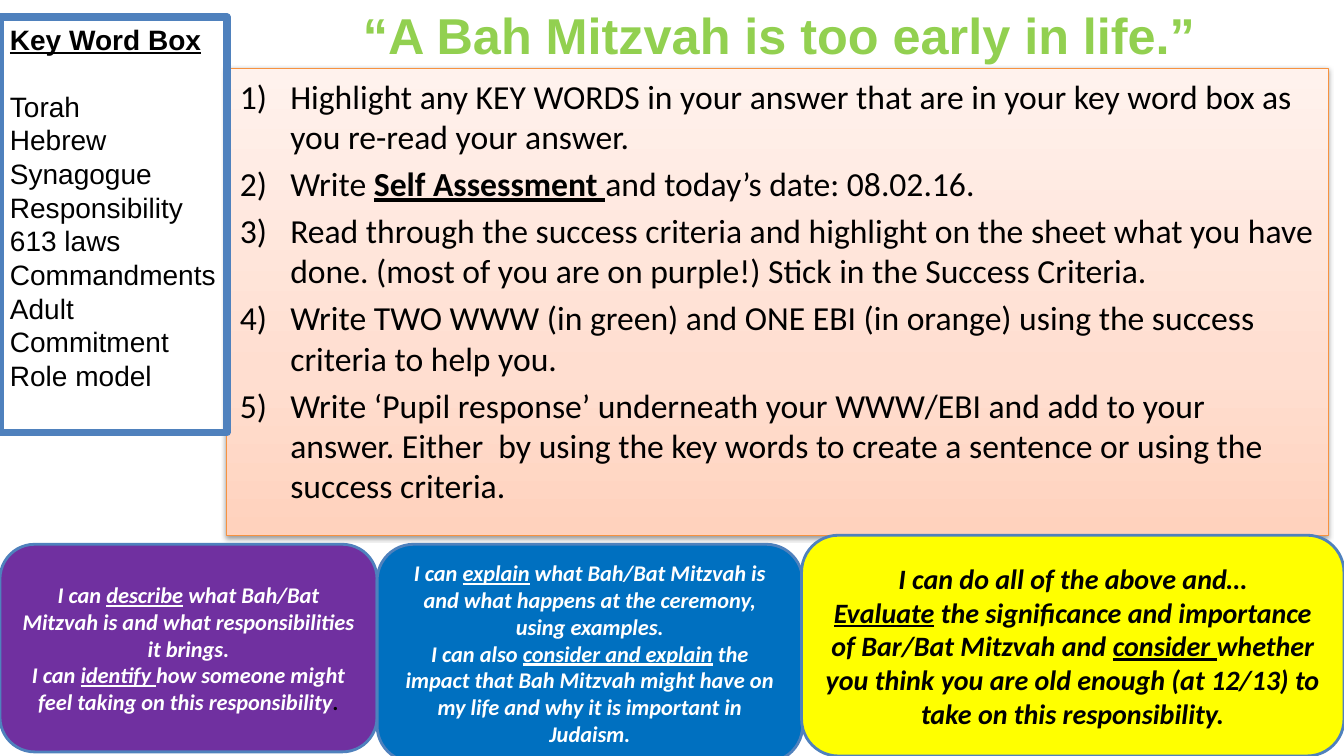
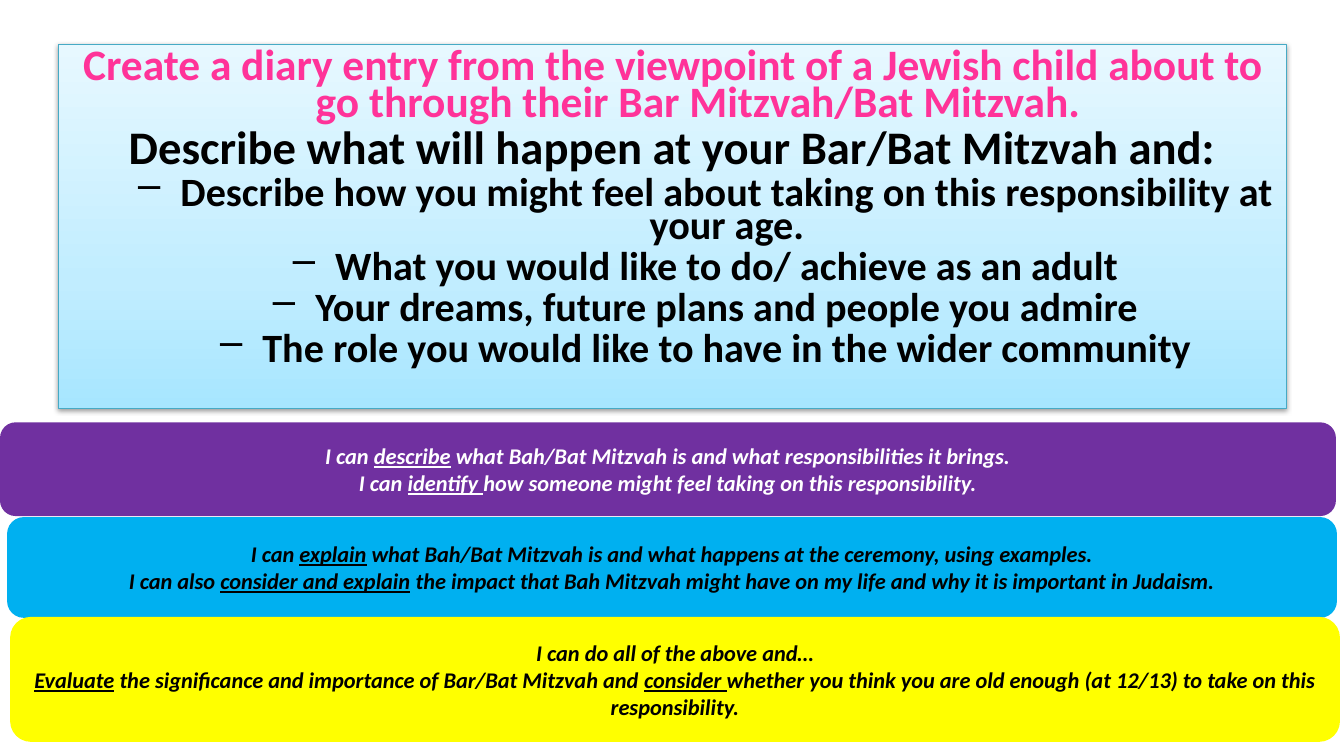
import copy

import pptx
import pptx.dml.color
import pptx.enum.shapes
import pptx.enum.text
import pptx.oxml
import pptx.oxml.ns
import pptx.util

PX = 9144  # EMU in one px, 100 px to the inch
SLIDE_SIZE = (1333, 750)
COLOURS = {
    "black": "000000", "white": "FFFFFF", "title": "92D050", "pink": "FF3399",
    "frame": "4F81BD", "purple": "7030A0", "blue": "0070C0", "sky": "00B0F0",
    "yellow": "FFFF00", "orange line": "F69240", "aqua line": "46AAC5",
}
ORANGE_FADE = ((0, "FFD2BD"), (0.35, "FFDED0"), (1, "FFF2ED"))
AQUA_FADE = ((0, "A7E6FF"), (0.35, "C1EDFF"), (1, "E7F8FF"))

SHAPES = pptx.enum.shapes.MSO_SHAPE
ALIGN = pptx.enum.text.PP_ALIGN
ANCHOR = pptx.enum.text.MSO_ANCHOR

# Underscores enclose underlined words
DESCRIBE = (
    "I can _describe_ what Bah/Bat Mitzvah is and what responsibilities it brings.",
    "I can _identify _how someone might feel taking on this responsibility",
)
EXPLAIN = (
    "I can _explain_ what Bah/Bat Mitzvah is and what happens at the ceremony, using examples.",
    "I can also _consider and explain_ the impact that Bah Mitzvah might have on my life "
    "and why it is important in Judaism.",
)
EVALUATE = (
    "I can do all of the above and…",
    "_Evaluate_ the significance and importance of Bar/Bat Mitzvah and _consider _whether "
    "you think you are old enough (at 12/13) to take on this responsibility.",
)
KEY_WORDS = ("Torah", "Hebrew", "Synagogue", "Responsibility", "613 laws",
             "Commandments", "Adult", "Commitment", "Role model")
STEPS = (
    "Highlight any KEY WORDS in your answer that are in your key word box as you re-read your answer.",
    "Write _Self Assessment _and today’s date: 08.02.16.",
    "Read through the success criteria and highlight on the sheet what you have done. "
    "(most of you are on purple!) Stick in the Success Criteria.",
    "Write TWO WWW (in green) and ONE EBI (in orange) using the success criteria to help you.",
    "Write ‘Pupil response’ underneath your WWW/EBI and add to your answer. "
    "Either  by using the key words to create a sentence or using the success criteria.",
)
DIARY_PROMPTS = (
    "Describe how you might feel about taking on this responsibility at your age.",
    "What you would like to do/ achieve as an adult",
    "Your dreams, future plans and people you admire",
    "The role you would like to have in the wider community",
)


def rgb(name):
    return pptx.dml.color.RGBColor.from_string(COLOURS.get(name, name))


def emu(*lengths):
    return [pptx.util.Emu(length * PX) for length in lengths]


def style(font, size, colour="black", name="Calibri", bold=None, italic=None):
    font.size, font.name = pptx.util.Pt(size), name
    font.bold, font.italic = bold, italic
    font.color.rgb = rgb(colour)


def write(para, text, bold_marks=False):
    """Add spans, underlining the words between underscores."""
    for index, part in enumerate(text.split("_")):
        if part:
            span = para.add_run()
            span.text = part
            if index % 2:
                span.font.underline = True
                if bold_marks:
                    span.font.bold = True


def next_para(frame):
    first = frame.paragraphs[0]
    return frame.add_paragraph() if first.runs else first


def set_indent(para, left, hanging, bullet=None, **attributes):
    properties = para._p.get_or_add_pPr()
    properties.set("marL", str(left * PX))
    properties.set("indent", str(-hanging * PX))
    if bullet:
        element = pptx.oxml.parse_xml(
            f'<a:{bullet} {pptx.oxml.ns.nsdecls("a")}/>')
        for key, value in attributes.items():
            element.set(key, value)
        properties.append(element)


def add_box(page, kind, box, fill=None, line=None, width=1.0, insets=(10, 5)):
    shape = page.shapes.add_shape(kind, *emu(*box))
    shape.shadow.inherit = False
    if fill:
        shape.fill.solid()
        shape.fill.fore_color.rgb = rgb(fill)
    else:
        shape.fill.background()
    if line:
        shape.line.color.rgb = rgb(line)
        shape.line.width = pptx.util.Pt(width)
    else:
        shape.line.fill.background()
    frame = shape.text_frame
    frame.word_wrap = True
    frame.margin_left = frame.margin_right = emu(insets[0])[0]
    frame.margin_top = frame.margin_bottom = emu(insets[1])[0]
    return shape


def add_panel(page, box, fade, line):
    """Rectangle with an upward fade and a soft shadow."""
    shape = add_box(page, SHAPES.RECTANGLE, box, line=line, width=0.75, insets=(13, 7))
    shape.fill.gradient()
    shape.fill.gradient_angle = 90
    properties = shape._element.spPr
    stops = properties.find(".//" + pptx.oxml.ns.qn("a:gsLst"))
    stops.append(copy.deepcopy(stops[0]))
    for stop, (position, colour) in zip(shape.fill.gradient_stops, fade):
        stop.position = position
        stop.color.rgb = rgb(colour)
    properties.find(pptx.oxml.ns.qn("a:effectLst")).append(pptx.oxml.parse_xml(
        f'<a:outerShdw {pptx.oxml.ns.nsdecls("a")} blurRad="40000" dist="20000" '
        'dir="5400000" rotWithShape="0"><a:srgbClr val="000000">'
        '<a:alpha val="38000"/></a:srgbClr></a:outerShdw>'))
    shape.text_frame.vertical_anchor = ANCHOR.TOP
    return shape.text_frame


def add_criteria(page, box, lines, fill, colour, size=16, line=None):
    """Rounded box of success criteria; returns its last paragraph."""
    shape = add_box(page, SHAPES.ROUNDED_RECTANGLE, box, fill, line, 2)
    frame = shape.text_frame
    frame.vertical_anchor = ANCHOR.MIDDLE
    for text in lines:
        para = next_para(frame)
        para.alignment = ALIGN.CENTER
        style(para.font, size, colour, bold=True, italic=True)
        write(para, text)
    return para


def add_title(page, box, text):
    frame = page.shapes.add_textbox(*emu(*box)).text_frame
    frame.word_wrap = True
    para = frame.paragraphs[0]
    para.alignment = ALIGN.CENTER
    style(para.font, 36, "title", "Arial", bold=True)
    write(para, text)


def add_key_words(page, box):
    shape = add_box(page, SHAPES.RECTANGLE, box, line="frame", width=5.5)
    frame = shape.text_frame
    frame.vertical_anchor = ANCHOR.TOP
    for text in ("_Key Word Box_",) + KEY_WORDS:
        para = next_para(frame)
        heading = text.startswith("_")
        para.alignment = ALIGN.LEFT
        para.line_spacing = pptx.util.Pt(24)
        if heading:
            para.space_after = pptx.util.Pt(24)
        style(para.font, 20, name="Arial", bold=heading)
        write(para, text)


def add_steps(page, box):
    frame = add_panel(page, box, ORANGE_FADE, "orange line")
    for index, text in enumerate(STEPS):
        para = next_para(frame)
        para.alignment = ALIGN.LEFT
        para.space_before = pptx.util.Pt(4.8 if index else 0)
        set_indent(para, 50, 50, "buAutoNum", type="arabicParenR")
        style(para.font, 24)
        write(para, text, bold_marks=True)


def add_diary_task(page, box):
    frame = add_panel(page, box, AQUA_FADE, "aqua line")
    rows = [
        ("Create a diary entry from the viewpoint of a Jewish child about to go through "
         "their Bar Mitzvah/Bat Mitzvah.", 31, "pink", 0),
        ("Describe what will happen at your Bar/Bat Mitzvah and:", 33.3, "black", 0),
    ] + [(prompt, 28.7, "black", 1) for prompt in DIARY_PROMPTS]
    for index, (text, size, colour, level) in enumerate(rows):
        para = next_para(frame)
        para.level = level
        para.alignment = ALIGN.CENTER
        para.line_spacing = 0.7
        para.space_before = pptx.util.Pt(round(size * 0.18, 1) if index else 0)
        if level:
            set_indent(para, 108, 42, "buChar", char="–")
        else:
            set_indent(para, 50, 50)
        style(para.font, size, colour, bold=True)
        write(para, text)


def build_self_assessment(page):
    add_title(page, (263, -1, 1020, 71), "“A Bah Mitzvah is too early in life.”")
    add_steps(page, (225, 68, 1093, 463))
    add_key_words(page, (0, 17, 225, 412))
    # Success criteria side by side
    last = add_criteria(page, (0, 540, 374, 206), DESCRIBE, "purple", "white", line="frame")
    stop = last.add_run()
    stop.text = "."
    stop.font.color.rgb = rgb("black")
    add_criteria(page, (374, 540, 422, 216), EXPLAIN, "blue", "white", line="frame")
    add_criteria(page, (795, 531, 538, 219), EVALUATE, "yellow", "black", 20, "frame")


def build_diary(page):
    add_diary_task(page, (58, 44, 1218, 361))
    # Success criteria stacked
    last = add_criteria(page, (0, 419, 1325, 93), DESCRIBE, "purple", "white")
    write(last, ".")
    add_criteria(page, (7, 513, 1319, 100), EXPLAIN, "sky", "black")
    add_criteria(page, (10, 612, 1319, 124), EVALUATE, "yellow", "black")


def main():
    deck = pptx.Presentation()
    deck.slide_width, deck.slide_height = emu(*SLIDE_SIZE)
    for build in (build_self_assessment, build_diary):
        build(deck.slides.add_slide(deck.slide_layouts[6]))
    deck.save("out.pptx")


if __name__ == "__main__":
    main()
